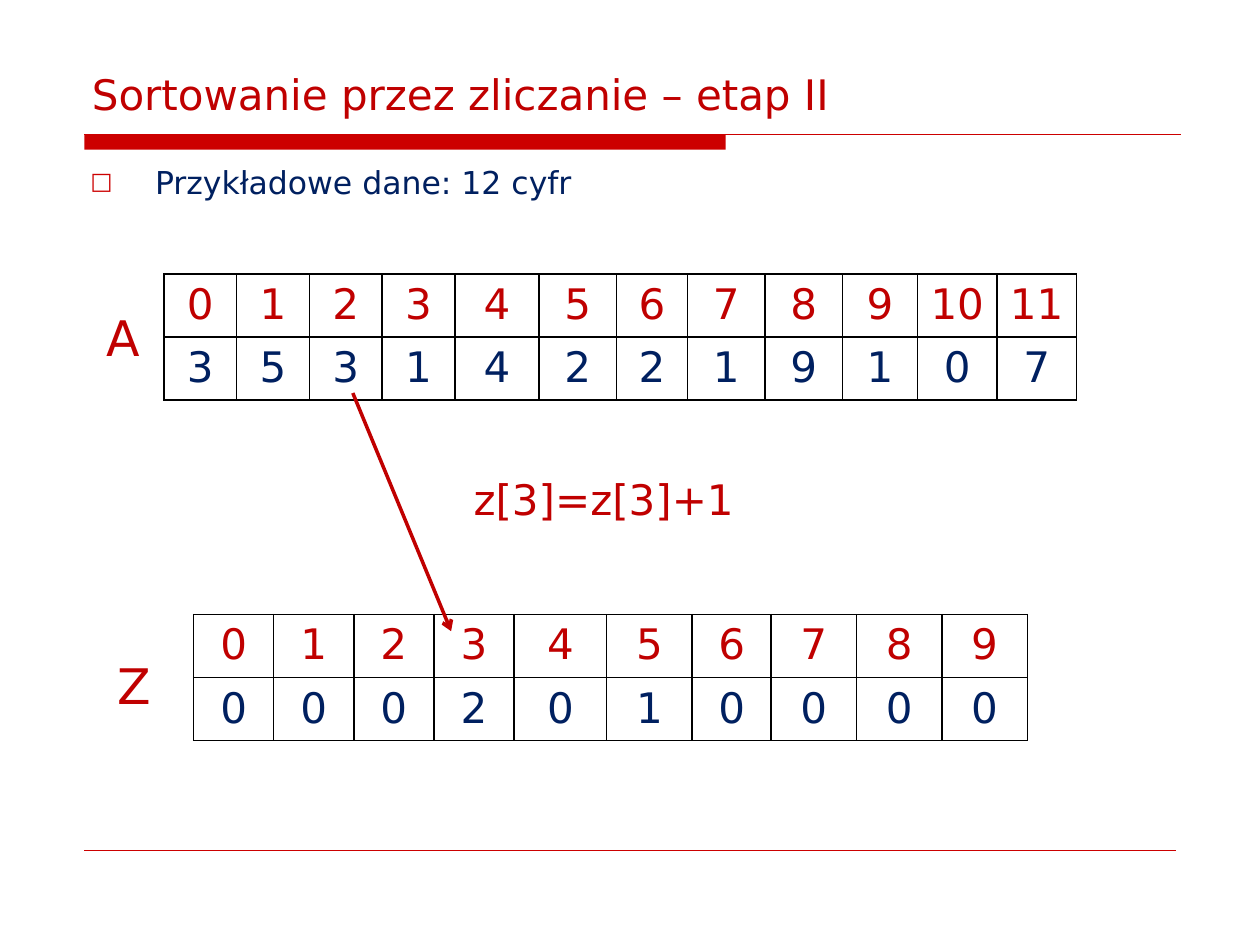
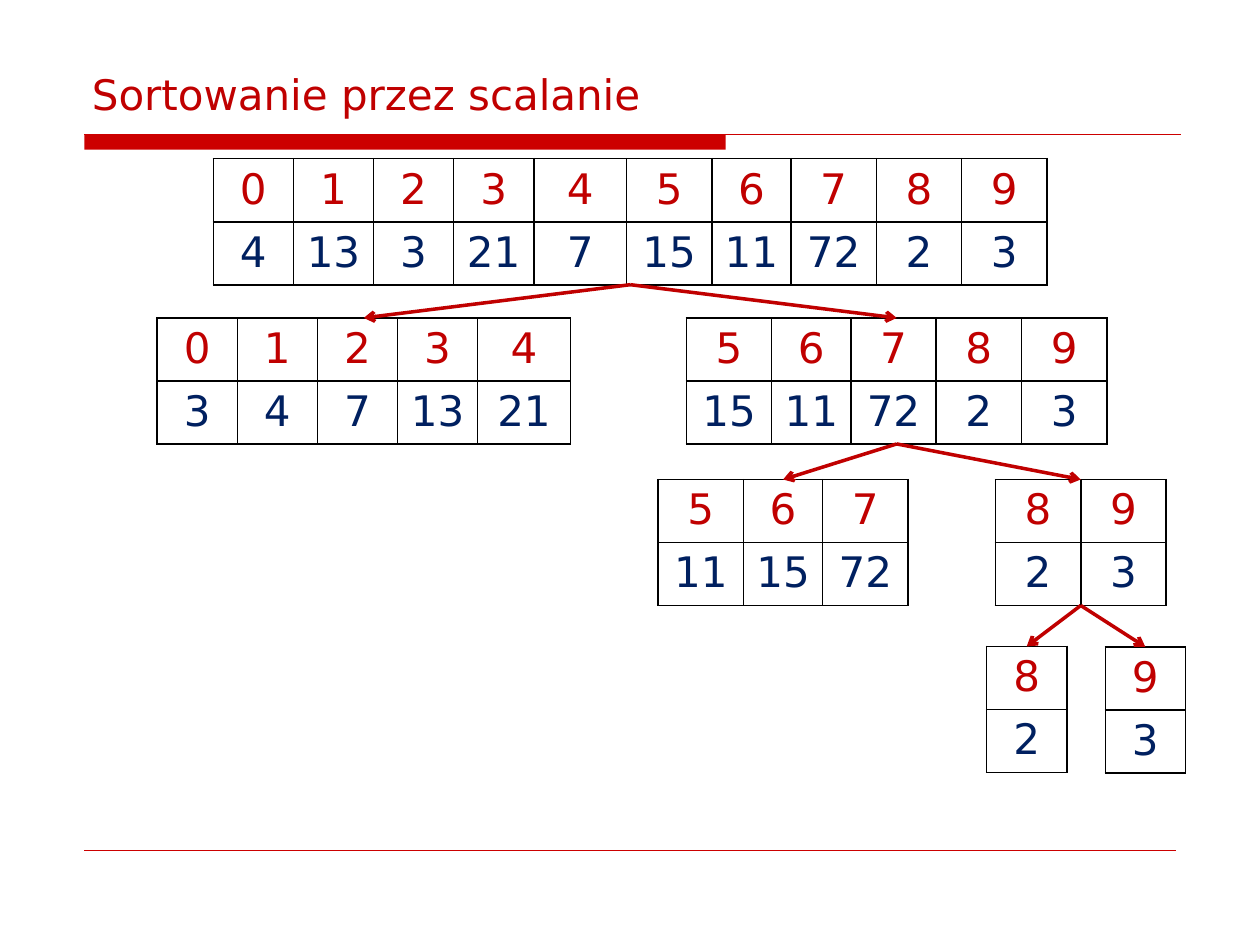
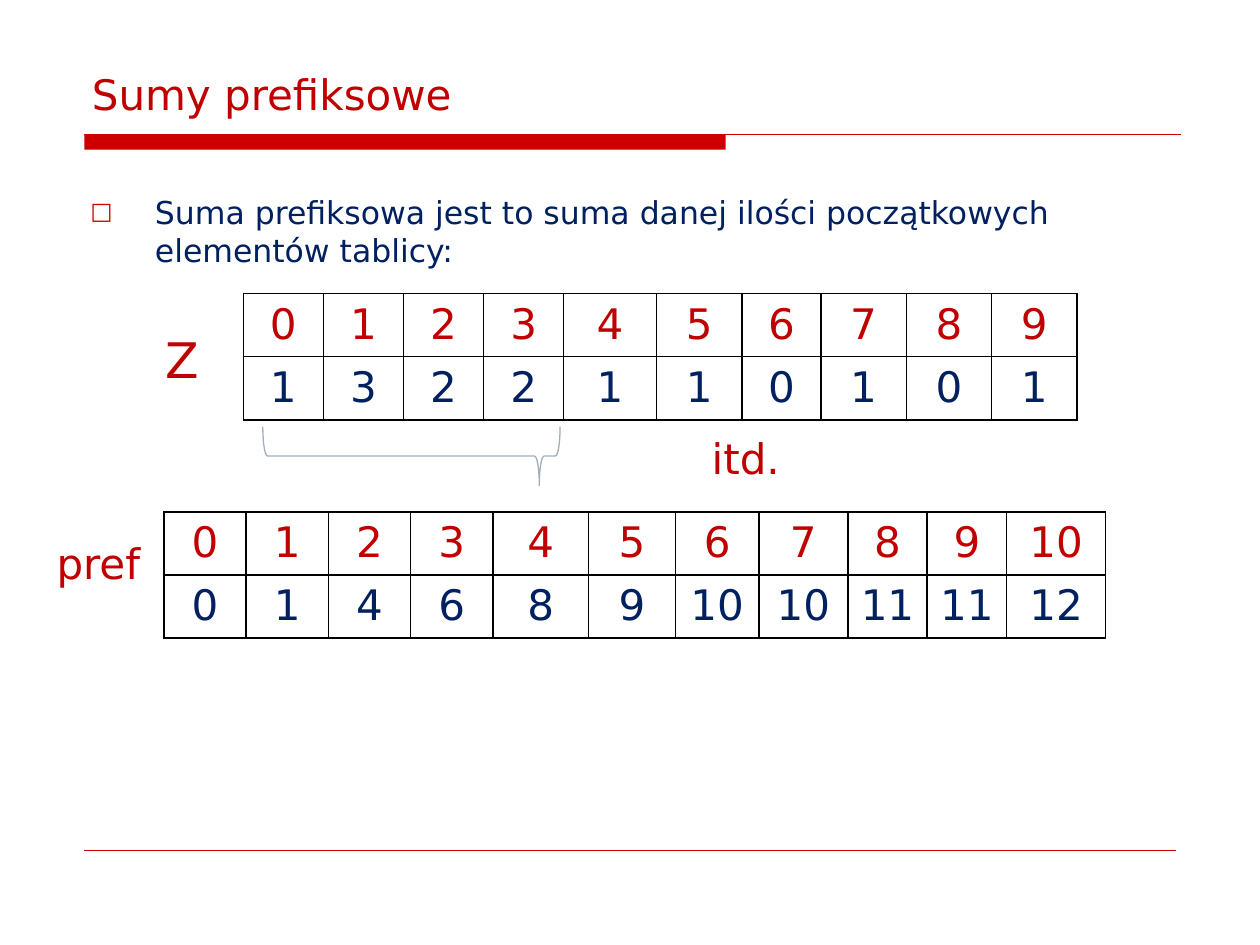
from dataclasses import dataclass

from lxml.etree import SubElement
from pptx import Presentation
from pptx.dml.color import RGBColor
from pptx.enum.shapes import MSO_CONNECTOR, MSO_SHAPE
from pptx.enum.text import MSO_ANCHOR, MSO_AUTO_SIZE, PP_ALIGN
from pptx.oxml.ns import qn
from pptx.slide import Slide
from pptx.text.text import _Paragraph as Paragraph
from pptx.util import Pt

COLORS = {
    "band": "CC0000",
    "accent": "C00000",
    "text": "002060",
    "border": "000000",
    "brace": "9FAEBD",
}
FONT = "DejaVu Sans"
FRAME_HEIGHT = 72
MARGIN_LEFT = 48.2

# Column widths, one per array index
DIGIT_WIDTHS = [45.8] * 4 + [53, 48.8, 45.2] + [48.8] * 3
DATA_WIDTHS = [41.6] * 4 + [48, 44.3, 40.6, 44.3, 44.3, 43, 45.4, 45.4]
PREFIX_WIDTHS = [47] * 4 + [54.7, 49.7, 47.7, 50.8, 45.4, 45.4, 56.6]


@dataclass(frozen=True)
class Array:
    """An array drawn as a row of indexes above a row of values."""
    left: float
    top: float
    values: list[int]
    widths: list[float]
    first: int = 0
    row_height: float = 35.1

    @property
    def center(self) -> float:
        return self.left + sum(self.widths) / 2

    @property
    def bottom(self) -> float:
        return self.top + FRAME_HEIGHT


@dataclass(frozen=True)
class Label:
    text: str
    left: float
    top: float
    width: float
    height: float = 36
    size: float = 24


def digits(left: float, top: float, values: list[int], first: int = 0) -> Array:
    """An array whose columns follow the shared widths of indexes 0 to 9."""
    return Array(left, top, values, DIGIT_WIDTHS[first:first + len(values)], first)


def rgb(name: str) -> RGBColor:
    return RGBColor.from_string(COLORS[name])


def write(paragraph: Paragraph, text: str, size: float, color: str) -> None:
    run = paragraph.add_run()
    run.text = text
    run.font.name = FONT
    run.font.size = Pt(size)
    run.font.color.rgb = rgb(color)


def draw_line(slide: Slide, start: tuple[float, float], end: tuple[float, float],
              color: str, width: float, arrow: bool = False) -> None:
    line = slide.shapes.add_connector(
        MSO_CONNECTOR.STRAIGHT, *(Pt(value) for value in (*start, *end)))
    line.line.color.rgb = rgb(color)
    line.line.width = Pt(width)
    if arrow:
        SubElement(line.line._get_or_add_ln(), qn("a:tailEnd"), type="arrow")
    SubElement(line._element.spPr, qn("a:effectLst"))


def draw_arrow(slide: Slide, start: tuple[float, float], end: tuple[float, float]) -> None:
    draw_line(slide, start, end, "accent", 2, arrow=True)


def add_slide(deck: Presentation, title: str) -> Slide:
    """A slide with the shared title, red band and footer rule."""
    slide = deck.slides.add_slide(deck.slide_layouts[6])
    band = slide.shapes.add_shape(
        MSO_SHAPE.RECTANGLE, Pt(MARGIN_LEFT), Pt(77), Pt(366.5), Pt(8.6))
    band.shadow.inherit = False
    band.fill.solid()
    band.fill.fore_color.rgb = rgb("band")
    band.line.fill.background()
    draw_line(slide, (MARGIN_LEFT, 77), (674.6, 77), "band", 0.75)
    draw_line(slide, (MARGIN_LEFT, 486), (672, 486), "band", 0.25)

    heading = slide.shapes.add_textbox(Pt(45.4), Pt(23.8), Pt(630), Pt(47.5)).text_frame
    heading.word_wrap = True
    heading.vertical_anchor = MSO_ANCHOR.BOTTOM
    write(heading.paragraphs[0], title, 24, "accent")
    return slide


def draw_bullet(slide: Slide, text: str, top: float, width: float) -> None:
    body = slide.shapes.add_textbox(Pt(44.6), Pt(top), Pt(width), Pt(60)).text_frame
    body.word_wrap = True
    item = body.paragraphs[0]
    write(item, text, 18, "text")
    props = item._p.get_or_add_pPr()
    props.set("marL", str(Pt(36.9)))
    props.set("indent", str(-Pt(36.9)))
    bullet_color = SubElement(props, qn("a:buClr"))
    SubElement(bullet_color, qn("a:srgbClr"), val=COLORS["band"])
    SubElement(props, qn("a:buSzPct"), val="75000")
    SubElement(props, qn("a:buFont"), typeface=FONT)
    SubElement(props, qn("a:buChar"), char="□")


def draw_label(slide: Slide, label: Label) -> None:
    frame = slide.shapes.add_textbox(
        Pt(label.left), Pt(label.top), Pt(label.width), Pt(label.height)).text_frame
    frame.word_wrap = False
    frame.auto_size = MSO_AUTO_SIZE.SHAPE_TO_FIT_TEXT
    write(frame.paragraphs[0], label.text, label.size, "accent")


def draw_array(slide: Slide, array: Array) -> None:
    table = slide.shapes.add_table(
        2, len(array.values), Pt(array.left), Pt(array.top),
        Pt(sum(array.widths)), Pt(2 * array.row_height)).table
    table.first_row = table.horz_banding = False
    for column, width in zip(table.columns, array.widths):
        column.width = Pt(width)
    indexes = range(array.first, array.first + len(array.values))
    for r, (numbers, color) in enumerate(((indexes, "accent"), (array.values, "text"))):
        table.rows[r].height = Pt(array.row_height)
        for c, number in enumerate(numbers):
            cell = table.cell(r, c)
            paragraph = cell.text_frame.paragraphs[0]
            paragraph.alignment = PP_ALIGN.CENTER
            write(paragraph, str(number), 24, color)
            props = cell._tc.get_or_add_tcPr()
            for side in ("lnL", "lnR", "lnT", "lnB"):
                border = SubElement(props, qn(f"a:{side}"), w=str(Pt(1)))
                fill = SubElement(border, qn("a:solidFill"))
                SubElement(fill, qn("a:srgbClr"), val=COLORS["border"])
            cell.fill.background()


def build_counting(deck: Presentation) -> None:
    slide = add_slide(deck, "Sortowanie przez zliczanie – etap II")
    draw_bullet(slide, "Przykładowe dane: 12 cyfr", 89.6, 630)
    draw_array(slide, Array(93.6, 156.6, [3, 5, 3, 1, 4, 2, 2, 1, 9, 1, 0, 7], DATA_WIDTHS))
    draw_array(slide, digits(110.6, 351.2, [0, 0, 0, 2, 0, 1, 0, 0, 0, 0]))
    for label in (Label("A", 54, 172.1, 33.8, 41, 28),
                  Label("Z", 59.8, 370.8, 33.8, 41, 28),
                  Label("z[3]=z[3]+1", 263.5, 267.1, 170)):
        draw_label(slide, label)
    draw_arrow(slide, (201.6, 224.6), (257.8, 360.7))


def build_merging(deck: Presentation) -> None:
    slide = add_slide(deck, "Sortowanie przez scalanie")
    whole = digits(121.9, 90.7, [4, 13, 3, 21, 7, 15, 11, 72, 2, 3])
    left_half = digits(89.8, 181.7, [3, 4, 7, 13, 21])
    right_half = digits(392.2, 181.7, [15, 11, 72, 2, 3], 5)
    triple = digits(376.1, 274, [11, 15, 72], 5)
    pair = digits(568.8, 274, [2, 3], 8)
    eighth = Array(563.8, 369.4, [2], [45.8], 8)
    ninth = Array(631.6, 369.7, [3], [45.8], 9)
    for array in (whole, left_half, right_half, triple, pair, eighth, ninth):
        draw_array(slide, array)
    splits = ((whole, left_half, right_half), (right_half, triple, pair),
              (pair, eighth, ninth))
    for parent, *parts in splits:
        for part in parts:
            draw_arrow(slide, (parent.center, parent.bottom), (part.center, part.top))


def build_prefix_sums(deck: Presentation) -> None:
    slide = add_slide(deck, "Sumy prefiksowe")
    draw_bullet(slide, "Suma prefiksowa jest to suma danej ilości początkowych "
                       "elementów tablicy:", 106.6, 666.7)
    counts = [1, 3, 2, 2, 1, 1, 0, 1, 0, 1]
    prefix_sums = [0, 1, 4, 6, 8, 9, 10, 10, 11, 11, 12]
    draw_array(slide, digits(139, 167.8, counts))
    draw_array(slide, Array(93.6, 292.5, prefix_sums, PREFIX_WIDTHS, row_height=36))
    for label in (Label("Z", 87.8, 185, 33.8, 41, 28),
                  Label("pref", 25.2, 303.8, 63.4),
                  Label("itd.", 399.6, 243.4, 54.7)):
        draw_label(slide, label)
    brace = slide.shapes.add_shape(
        MSO_SHAPE.RIGHT_BRACE, Pt(218.2), Pt(175.7), Pt(33.8), Pt(169.9))
    brace.rotation = 90
    brace.adjustments[0] = 0.08
    brace.adjustments[1] = 0.07
    brace.shadow.inherit = False
    brace.fill.background()
    brace.line.color.rgb = rgb("brace")
    brace.line.width = Pt(0.75)


def main() -> None:
    deck = Presentation()
    deck.slide_width, deck.slide_height = Pt(720), Pt(540)
    build_counting(deck)
    build_merging(deck)
    build_prefix_sums(deck)
    deck.save("out.pptx")


if __name__ == "__main__":
    main()
